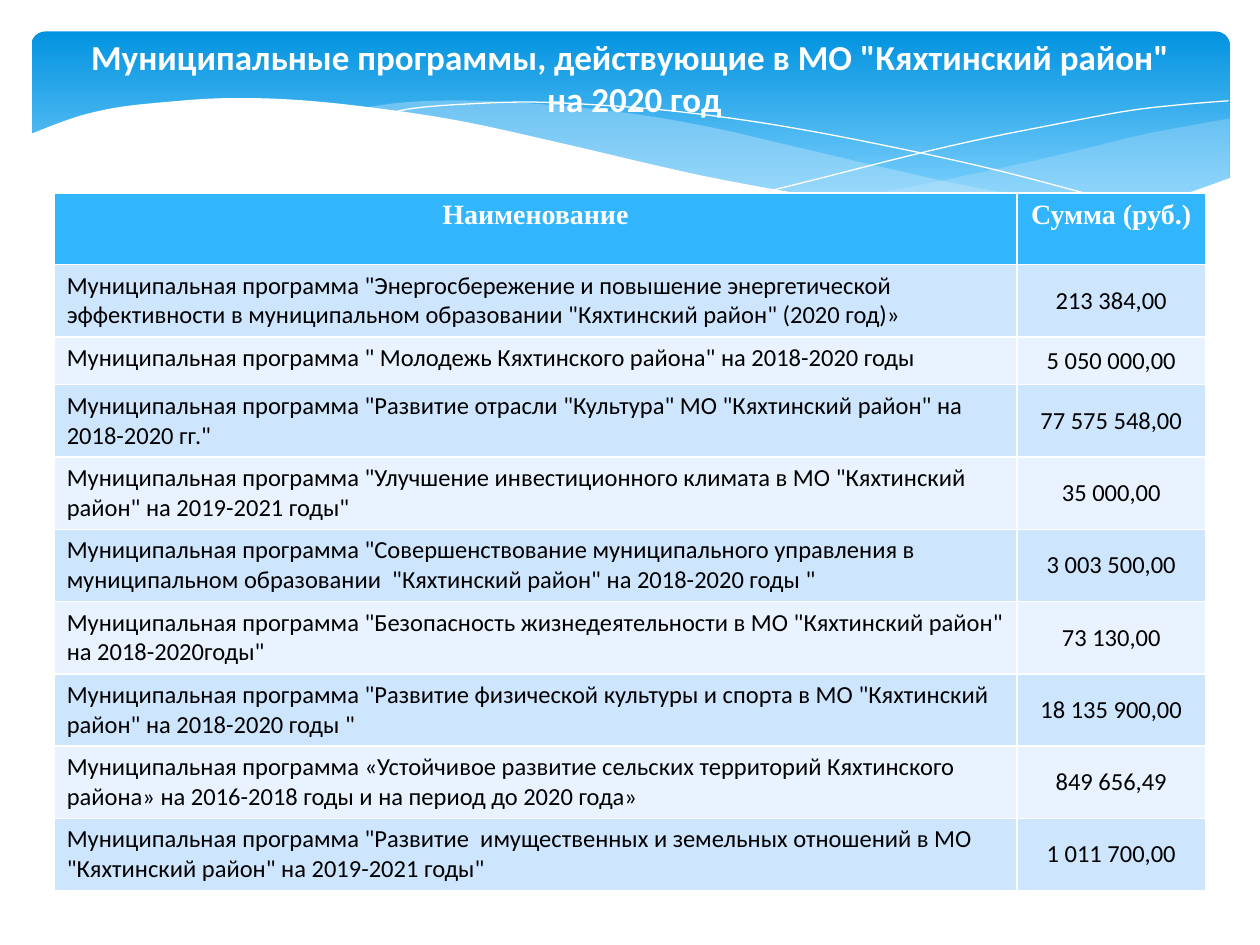
"""Build a slide listing the municipal programmes of a district for 2020."""
from dataclasses import dataclass

from lxml import etree
from pptx import Presentation
from pptx.dml.color import RGBColor
from pptx.enum.shapes import MSO_SHAPE
from pptx.enum.text import MSO_ANCHOR, MSO_AUTO_SIZE, PP_ALIGN
from pptx.oxml.ns import qn
from pptx.util import Inches, Pt

ROUNDED = MSO_SHAPE.ROUNDED_RECTANGLE
TOP, MIDDLE = MSO_ANCHOR.TOP, MSO_ANCHOR.MIDDLE
LEFT, CENTER = PP_ALIGN.LEFT, PP_ALIGN.CENTER
GROW = MSO_AUTO_SIZE.SHAPE_TO_FIT_TEXT


@dataclass(frozen=True)
class Theme:
    white: RGBColor = RGBColor.from_string("FFFFFF")
    black: RGBColor = RGBColor.from_string("000000")
    banner_top: RGBColor = RGBColor.from_string("0293E0")
    banner_bottom: RGBColor = RGBColor.from_string("83D3FE")
    wave: RGBColor = RGBColor.from_string("C6E7FC")
    header: RGBColor = RGBColor.from_string("31B6FD")
    dark_band: RGBColor = RGBColor.from_string("CEE5FE")
    light_band: RGBColor = RGBColor.from_string("E8F3FF")
    title_size: Pt = Pt(20)
    header_size: Pt = Pt(16)
    body_size: Pt = Pt(14)
    hairline: Pt = Pt(0)
    sans: str = "Calibri"
    serif: str = "Times New Roman"


def smooth_curve(knots, steps=6):
    """Return points on a Catmull-Rom curve through the knots."""
    ends = [knots[0], *knots, knots[-1]]
    points = [knots[0]]
    for a, b, c, d in zip(ends, ends[1:], ends[2:], ends[3:]):
        for step in range(1, steps + 1):
            t = step / steps
            points.append(tuple(
                0.5 * (2 * q + (r - p) * t + (2 * p - 5 * q + 4 * r - s) * t ** 2
                       + (3 * q - p - 3 * r + s) * t ** 3)
                for p, q, r, s in zip(a, b, c, d)))
    return points


def format_text(paragraph, alignment, **font_values):
    """Align a paragraph and format its runs."""
    paragraph.alignment = alignment
    for span in paragraph.runs:
        span.font.color.rgb = font_values["color"]
        for name in ("name", "size", "bold"):
            setattr(span.font, name, font_values[name])


theme = Theme()
deck = Presentation()
deck.slide_width, deck.slide_height = Inches(10), Inches(7.5)
page = deck.slides.add_slide(deck.slide_layouts[5])

banner = page.shapes.add_shape(ROUNDED, Inches(0.25), Inches(0.25), Inches(9.51), Inches(1.56))
banner.adjustments[0] = 0.07
banner.shadow.inherit = False
banner.line.fill.background()
banner.fill.gradient()
banner.fill.gradient_angle = 270
for stop, color, position in zip(
        banner.fill.gradient_stops, (theme.banner_top, theme.banner_bottom), (0, 0.9)):
    stop.color.rgb = color
    stop.position = position

right_wave = [
    [(9.76, 0.94), (9.48, 0.99), (9.06, 1.07), (8.61, 1.18), (8.05, 1.31), (7.29, 1.47), (6.61, 1.6)],
    [(6.61, 1.6), (7.05, 1.65), (7.57, 1.7), (8.03, 1.72), (8.44, 1.71), (8.89, 1.66),
     (9.28, 1.58), (9.63, 1.47), (9.76, 1.41)],
]
middle_wave = [
    [(8.93, 1.67), (8.37, 1.59), (7.75, 1.49), (7.06, 1.34), (6.29, 1.16), (5.69, 1.02),
     (5.14, 0.92), (4.65, 0.86), (4.2, 0.82), (3.8, 0.8), (3.44, 0.8), (3.13, 0.82), (2.86, 0.86)],
    [(2.86, 0.86), (3.23, 0.9), (3.62, 0.97), (4.04, 1.06), (4.49, 1.16), (5.3, 1.35),
     (6.01, 1.5), (6.65, 1.61), (7.22, 1.68), (7.73, 1.72), (8.18, 1.73), (8.57, 1.71), (8.93, 1.67)],
]
falling_line = [
    [(3.09, 0.9), (3.28, 0.86), (3.63, 0.83), (4.16, 0.81), (4.69, 0.83), (5.33, 0.88),
     (6.08, 0.98), (6.95, 1.14), (7.95, 1.36), (9.07, 1.66)],
]
rising_line = [
    [(6.13, 1.51), (6.53, 1.41), (7.2, 1.24), (7.76, 1.11), (8.36, 0.99), (8.95, 0.88),
     (9.38, 0.83), (9.75, 0.8)],
]
front_wave = [
    [(9.77, 1.41), (9.4, 1.54), (8.99, 1.64), (8.5, 1.7), (7.93, 1.71), (7.26, 1.67),
     (6.48, 1.56), (5.55, 1.39), (4.47, 1.14), (3.65, 0.96), (2.92, 0.85), (2.3, 0.79),
     (1.77, 0.78), (1.32, 0.81), (0.95, 0.85), (0.67, 0.91), (0.46, 0.98), (0.23, 1.07)],
    [(0.23, 2.24)],
    [(9.77, 2.24)],
]
ribbons = [
    (right_wave, theme.wave, 29),
    (middle_wave, theme.wave, 40),
    (falling_line, None, None),
    (rising_line, None, None),
    (front_wave, theme.white, 100),
]
for curves, fill_color, opacity in ribbons:
    outline = [(Inches(x), Inches(y)) for curve in curves for x, y in smooth_curve(curve)]
    builder = page.shapes.build_freeform(*outline[0])
    builder.add_line_segments(outline[1:], close=fill_color is not None)
    ribbon = builder.convert_to_shape()
    ribbon.shadow.inherit = False
    if fill_color is None:
        ribbon.fill.background()
        ribbon.line.color.rgb = theme.white
        ribbon.line.width = theme.hairline
        continue
    ribbon.line.fill.background()
    ribbon.fill.solid()
    ribbon.fill.fore_color.rgb = fill_color
    if opacity < 100:
        color_node = ribbon.element.find(".//" + qn("a:srgbClr"))
        etree.SubElement(color_node, qn("a:alpha"), val=str(opacity * 1000))

rows = [
    ("Наименование", "Сумма (руб.)"),
    ('Муниципальная программа "Энергосбережение и повышение энергетической эффективности '
     'в муниципальном образовании "Кяхтинский район" (2020 год)»', "213 384,00"),
    ('Муниципальная программа " Молодежь Кяхтинского района" на 2018-2020 годы', "5 050 000,00"),
    ('Муниципальная программа "Развитие отрасли "Культура" МО "Кяхтинский район" '
     'на 2018-2020 гг."', "77 575 548,00"),
    ('Муниципальная программа "Улучшение инвестиционного климата в МО "Кяхтинский район" '
     'на 2019-2021 годы"', "35 000,00"),
    ('Муниципальная программа "Совершенствование муниципального управления в муниципальном '
     'образовании  "Кяхтинский район" на 2018-2020 годы "', "3 003 500,00"),
    ('Муниципальная программа "Безопасность жизнедеятельности в МО "Кяхтинский район" '
     'на 2018-2020годы"', "73 130,00"),
    ('Муниципальная программа "Развитие физической культуры и спорта в МО "Кяхтинский район" '
     'на 2018-2020 годы "', "18 135 900,00"),
    ('Муниципальная программа «Устойчивое развитие сельских территорий Кяхтинского района» '
     'на 2016-2018 годы и на период до 2020 года»', "849 656,49"),
    ('Муниципальная программа "Развитие  имущественных и земельных отношений в МО '
     '"Кяхтинский район" на 2019-2021 годы"', "1 011 700,00"),
]
header_font = dict(name=theme.serif, size=theme.header_size, bold=True, color=theme.white)
body_font = dict(name=theme.sans, size=theme.body_size, bold=False, color=theme.black)
programmes = page.shapes.add_table(
    len(rows), 2, Inches(0.43), Inches(1.53), Inches(9.14), Inches(5.49)).table
for column, width in zip(programmes.columns, (7.64, 1.5)):
    column.width = Inches(width)
for row_index, texts in enumerate(rows):
    is_header = row_index == 0
    programmes.rows[row_index].height = Inches(0.38 if row_index == 2 else 0.57)
    band = theme.dark_band if row_index % 2 else theme.light_band
    for column_index, text in enumerate(texts):
        cell = programmes.cell(row_index, column_index)
        cell.text = text
        cell.fill.solid()
        cell.fill.fore_color.rgb = theme.header if is_header else band
        cell.vertical_anchor = MIDDLE if column_index and not is_header else TOP
        format_text(cell.text_frame.paragraphs[0], CENTER if is_header or column_index else LEFT,
                    **(header_font if is_header else body_font))

title = page.shapes.title
title_box = dict(left=Inches(0.2), top=Inches(0.23), width=Inches(9.67), height=Inches(0.77))
for name, value in title_box.items():
    setattr(title, name, value)
title.text_frame.text = 'Муниципальные программы, действующие в МО "Кяхтинский район" \nна 2020 год'
for name, value in dict(word_wrap=True, vertical_anchor=TOP, auto_size=GROW).items():
    setattr(title.text_frame, name, value)
for paragraph in title.text_frame.paragraphs:
    format_text(paragraph, CENTER, name=theme.sans, size=theme.title_size, bold=True, color=theme.white)
page.shapes.element.append(title.element)

deck.save("out.pptx")
